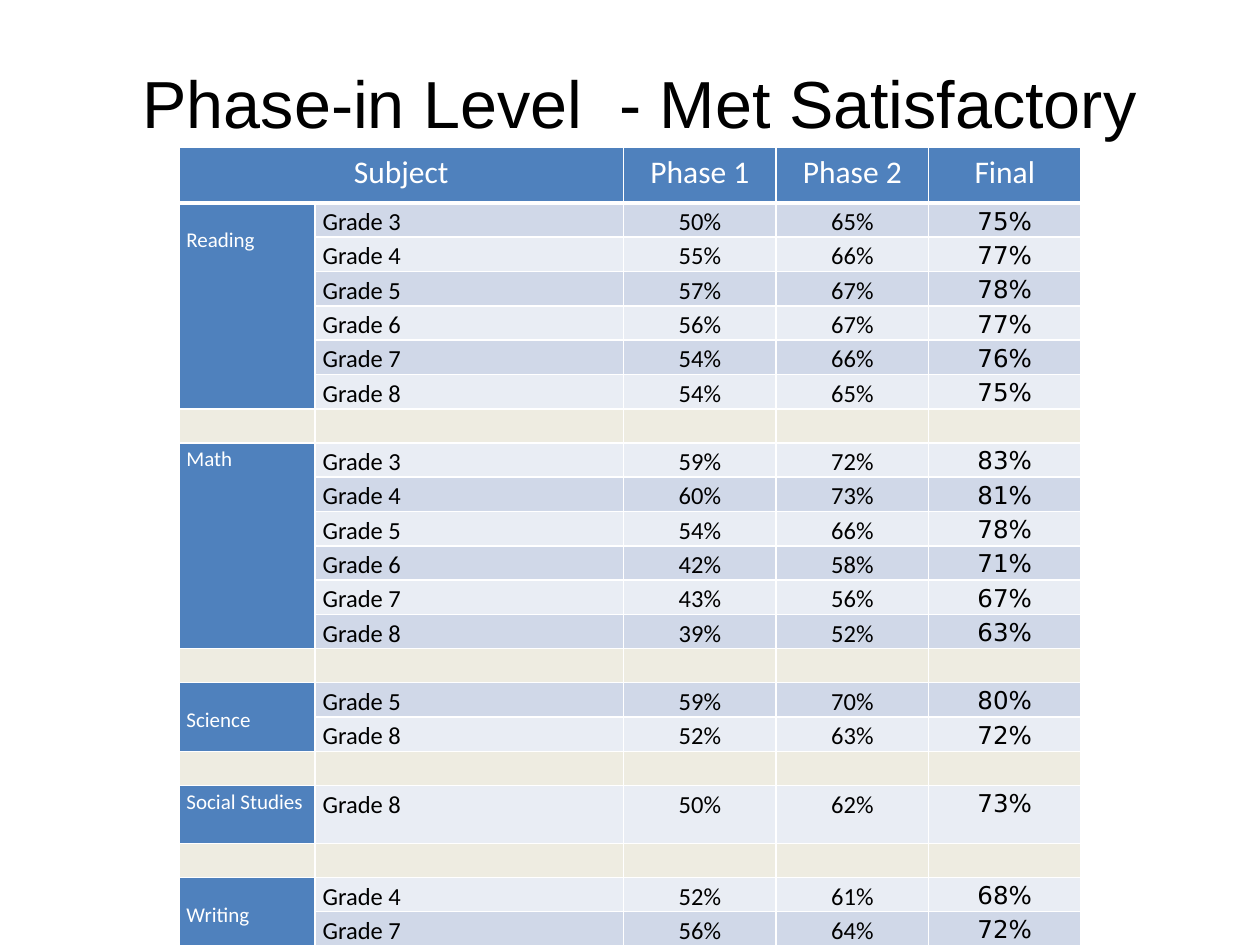
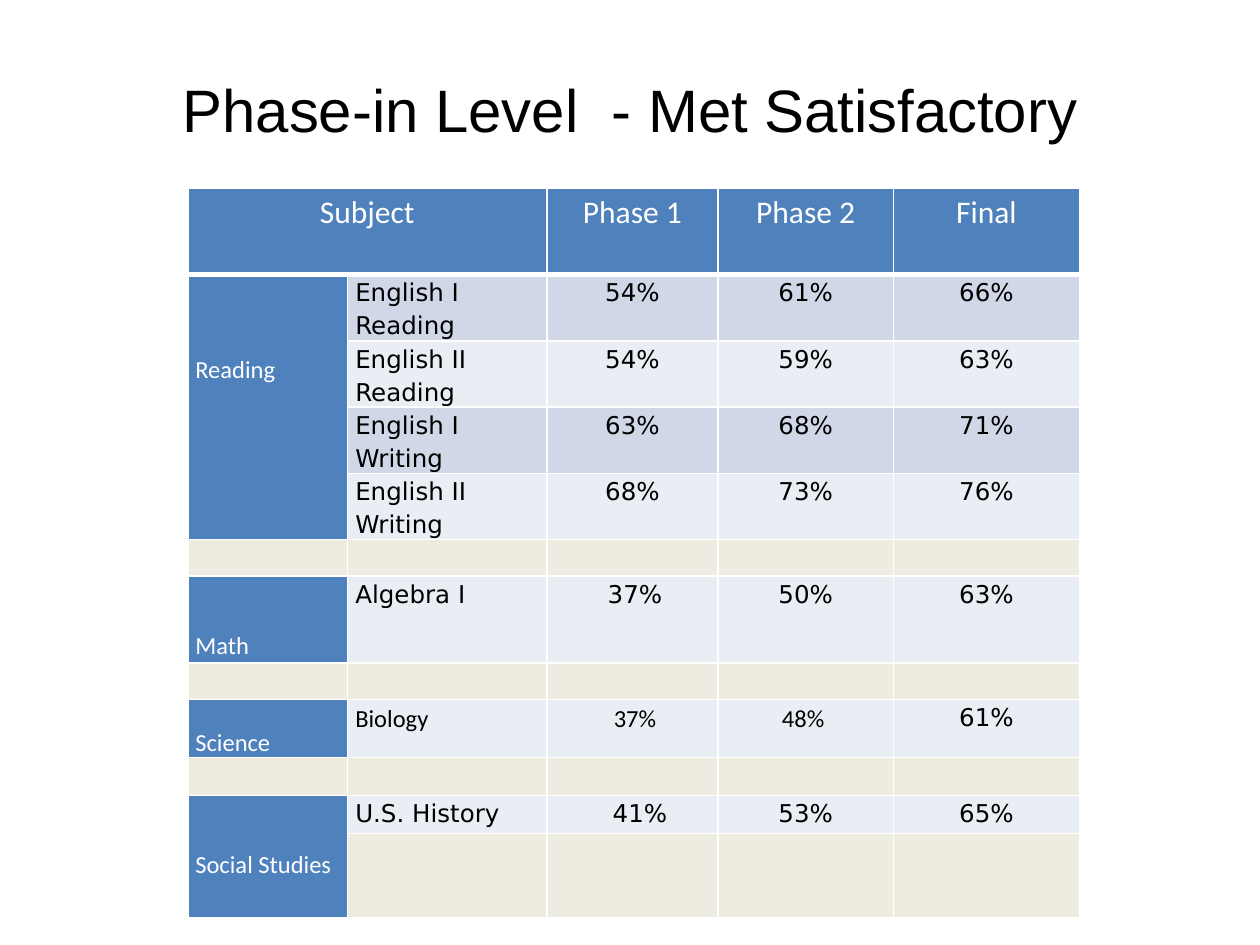
from collections import namedtuple

from lxml.etree import SubElement
from pptx import Presentation
from pptx.dml.color import RGBColor
from pptx.enum.text import MSO_ANCHOR as Anchor, MSO_AUTO_SIZE as AutoSize, PP_ALIGN as Align
from pptx.oxml.ns import qn
from pptx.util import Inches, Pt

WHITE, BLACK = "FFFFFF", "000000"
BLUE, BLANK = "4F81BD", "EEECE1"
BANDS = ("E9EDF4", "D0D8E8")
TITLE_FONT, TEXT_FONT, NUMBER_FONT = "Arial", "Calibri", "DejaVu Sans"
TITLE = "Phase-in Level  - Met Satisfactory"
HEADINGS = ("Subject", "", "Phase 1", "Phase 2", "Final")
GAP = None

# drop is the distance from the top of the cell to the subject name
Group = namedtuple("Group", "subject drop tests")
# text_tests are set in the text font, except for their last column
Layout = namedtuple("Layout", "left top columns heights subject_size text_tests nudges")

GRADE_GROUPS = [
    Group("Reading", 0.17, [
        ("Grade 3", "50%", "65%", "75%"),
        ("Grade 4", "55%", "66%", "77%"),
        ("Grade 5", "57%", "67%", "78%"),
        ("Grade 6", "56%", "67%", "77%"),
        ("Grade 7", "54%", "66%", "76%"),
        ("Grade 8", "54%", "65%", "75%"),
    ]),
    GAP,
    Group("Math", 0, [
        ("Grade 3", "59%", "72%", "83%"),
        ("Grade 4", "60%", "73%", "81%"),
        ("Grade 5", "54%", "66%", "78%"),
        ("Grade 6", "42%", "58%", "71%"),
        ("Grade 7", "43%", "56%", "67%"),
        ("Grade 8", "39%", "52%", "63%"),
    ]),
    GAP,
    Group("Science", 0.17, [
        ("Grade 5", "59%", "70%", "80%"),
        ("Grade 8", "52%", "63%", "72%"),
    ]),
    GAP,
    Group("Social Studies", 0, [("Grade 8", "50%", "62%", "73%")]),
    GAP,
    Group("Writing", 0.17, [
        ("Grade 4", "52%", "61%", "68%"),
        ("Grade 7", "56%", "64%", "72%"),
    ]),
]

COURSE_GROUPS = [
    Group("Reading", 0.6, [
        ("English I Reading", "54%", "61%", "66%"),
        ("English II Reading", "54%", "59%", "63%"),
        ("English I Writing", "63%", "68%", "71%"),
        ("English II Writing", "68%", "73%", "76%"),
    ]),
    GAP,
    Group("Math", 0.4, [("Algebra I", "37%", "50%", "63%")]),
    GAP,
    Group("Science", 0.19, [("Biology", "37%", "48%", "61%")]),
    GAP,
    Group("Social Studies", 0.4, [
        ("U.S. History", "41%", "53%", "65%"),
        ("", "", "", ""),
    ]),
]

GRADE_LAYOUT = Layout(
    1.42, 1.17, (1.08, 2.45, 1.21, 1.21, 1.21),
    [0.44] + [0.27] * 17 + [0.46] + [0.27] * 3,
    12, {f"Grade {grade}" for grade in range(3, 9)}, {})
COURSE_LAYOUT = Layout(
    1.49, 1.49, (1.27, 1.58, 1.36, 1.39, 1.48),
    [0.69] + [0.52] * 4 + [0.29, 0.69, 0.29, 0.46, 0.3, 0.3, 0.67],
    14, {"Biology"}, {"37%": 0.04, "48%": -0.04, "41%": 0.12})


def color(value):
    return RGBColor.from_string(value)


class Deck:
    def __init__(self):
        self.presentation = Presentation()
        self.presentation.slide_width = Inches(10)
        self.presentation.slide_height = Inches(7.5)
        self.slide = None

    def add_slide(self):
        self.slide = self.presentation.slides.add_slide(self.presentation.slide_layouts[5])

    def run(self, paragraph, text, size, font, ink):
        run = paragraph.add_run()
        run.text = text
        run.font.size = Pt(size)
        run.font.name = font
        run.font.color.rgb = color(ink)

    def title(self, left, top, width, height, size):
        shape = self.slide.shapes.title
        shape.left, shape.top = Inches(left), Inches(top)
        shape.width, shape.height = Inches(width), Inches(height)
        frame = shape.text_frame
        frame.auto_size = AutoSize.NONE
        frame.vertical_anchor = Anchor.MIDDLE
        paragraph = frame.paragraphs[0]
        paragraph.alignment = Align.CENTER
        self.run(paragraph, TITLE, size, TITLE_FONT, BLACK)

    def borders(self, cell, bottom):
        """Draw white borders; call before the fill is set."""
        properties = cell._tc.get_or_add_tcPr()
        for side, width in (("L", 1), ("R", 1), ("T", 1), ("B", bottom)):
            line = SubElement(properties, qn(f"a:ln{side}"), w=str(Pt(width)))
            SubElement(SubElement(line, qn("a:solidFill")), qn("a:srgbClr"), val=WHITE)

    def cell(self, cell, text, fill, size=14, font=TEXT_FONT, ink=BLACK,
             align=Align.LEFT, drop=0, nudge=0, bottom=1):
        self.borders(cell, bottom)
        cell.fill.solid()
        cell.fill.fore_color.rgb = color(fill)
        cell.margin_left = Inches(0.06 + max(nudge, 0))
        cell.margin_right = Inches(0.06 + max(-nudge, 0))
        cell.margin_top, cell.margin_bottom = Inches(drop), 0
        paragraph = cell.text_frame.paragraphs[0]
        paragraph.alignment = align
        paragraph.line_spacing = 1.15
        if text:
            self.run(paragraph, text, size, font, ink)
        else:
            # Keeps an empty cell from stretching its row
            SubElement(paragraph._p, qn("a:endParaRPr"), sz="1000")

    def test_row(self, table, row, test, layout):
        for column, text in enumerate(test, 1):
            is_text = test[0] in layout.text_tests and column < 4
            self.cell(table.cell(row, column), text,
                      BANDS[row % 2] if test[0] else BLANK,
                      font=TEXT_FONT if is_text else NUMBER_FONT,
                      align=Align.LEFT if column == 1 else Align.CENTER,
                      nudge=layout.nudges.get(text, 0) if column < 4 else 0)

    def subject_cells(self, table, first, group, size):
        last = first + len(group.tests) - 1
        for row in range(first, last + 1):
            is_first = row == first
            self.cell(table.cell(row, 0), group.subject if is_first else "", BLUE,
                      size=size, ink=WHITE, drop=group.drop if is_first else 0)
        if last > first:
            table.cell(first, 0).merge(table.cell(last, 0))

    def phase_table(self, layout, groups):
        frame = self.slide.shapes.add_table(
            len(layout.heights), len(layout.columns), Inches(layout.left), Inches(layout.top),
            Inches(sum(layout.columns)), Inches(sum(layout.heights)))
        table = frame.table
        table.first_row = table.horz_banding = False
        for column, width in zip(table.columns, layout.columns):
            column.width = Inches(width)
        for row, height in zip(table.rows, layout.heights):
            row.height = Inches(height)

        for column, heading in enumerate(HEADINGS):
            self.cell(table.cell(0, column), heading, BLUE, size=18, ink=WHITE,
                      align=Align.CENTER, bottom=3)
        table.cell(0, 0).merge(table.cell(0, 1))

        row = 1
        for group in groups:
            if group is GAP:
                for column in range(len(layout.columns)):
                    self.cell(table.cell(row, column), "", BLANK)
                row += 1
                continue
            self.subject_cells(table, row, group, layout.subject_size)
            for test in group.tests:
                self.test_row(table, row, test, layout)
                row += 1


def main():
    deck = Deck()
    deck.add_slide()
    deck.title(0.58, 0.27, 9, 1.08, size=38)
    deck.phase_table(GRADE_LAYOUT, GRADE_GROUPS)

    deck.add_slide()
    deck.title(1.16, 0.24, 7.68, 1.25, size=34.2)
    deck.phase_table(COURSE_LAYOUT, COURSE_GROUPS)
    deck.presentation.save("out.pptx")


if __name__ == "__main__":
    main()
